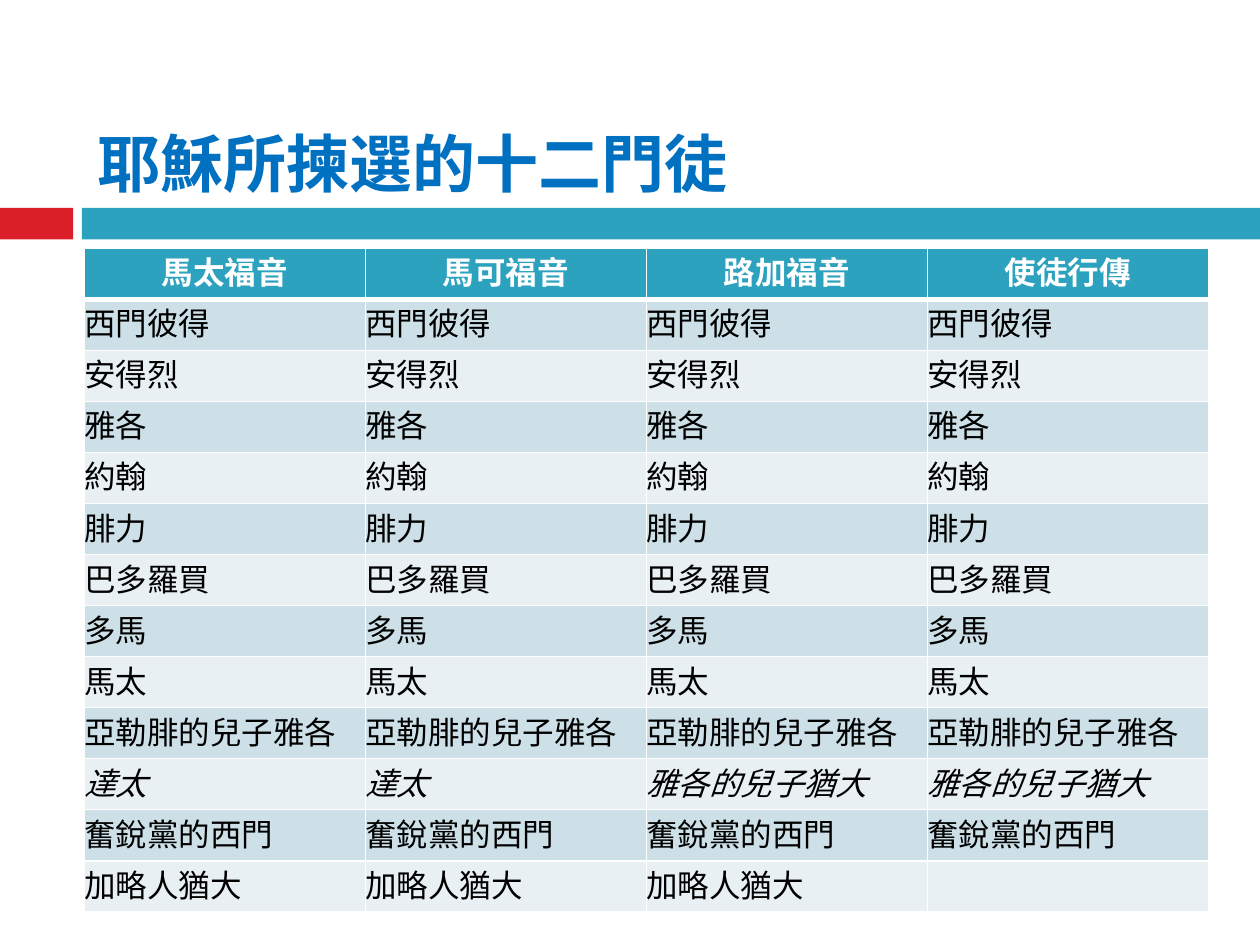
import pptx
import pptx.dml.color
import pptx.enum.shapes
import pptx.enum.text
import pptx.oxml
import pptx.oxml.ns
import pptx.util

Inches = pptx.util.Inches
FONT = "Cabin"
COLORS = {
    "red": "DA1F28",
    "teal": "2DA2BF",
    "title": "0070C0",
    "white": "FFFFFF",
    "black": "000000",
    "dark": "CDE0E8",
    "light": "E8F0F4",
}
BOOKS = ["馬太福音", "馬可福音", "路加福音", "使徒行傳"]
FIRST = ["西門彼得", "安得烈", "雅各", "約翰", "腓力", "巴多羅買",
         "多馬", "馬太", "亞勒腓的兒子雅各"]
VARIED = ["達太", "達太", "雅各的兒子猶大", "雅各的兒子猶大"]
ROWS = [
    BOOKS,
    *[[name] * 4 for name in FIRST],
    VARIED,
    ["奮銳黨的西門"] * 4,
    ["加略人猶大"] * 3 + [""],
]


def rgb(name):
    return pptx.dml.color.RGBColor.from_string(COLORS[name])


def paint(item, name):
    item.fill.solid()
    item.fill.fore_color.rgb = rgb(name)


def add_run(para, text, size, color, bold=False, italic=False):
    run = para.add_run()
    run.text = text
    font = run.font
    font.name = FONT
    font.size = pptx.util.Pt(size)
    font.bold = bold
    font.italic = italic
    font.color.rgb = rgb(color)


def add_title(slide, text):
    title = slide.shapes.title
    title.left, title.top = Inches(0.67), Inches(0.17)
    title.width, title.height = Inches(8.92), Inches(1.47)
    frame = title.text_frame
    frame.word_wrap = True
    frame.vertical_anchor = pptx.enum.text.MSO_ANCHOR.BOTTOM
    para = frame.paragraphs[0]
    para.alignment = pptx.enum.text.PP_ALIGN.LEFT
    add_run(para, text, 36, "title", bold=True)


def add_bar(slide, left, width, color):
    bar = slide.shapes.add_shape(
        pptx.enum.shapes.MSO_SHAPE.RECTANGLE,
        Inches(left), Inches(1.65), Inches(width), Inches(0.25))
    bar.shadow.inherit = False
    paint(bar, color)
    bar.line.fill.background()


def add_edge(cell, side, points):
    space = pptx.oxml.ns.nsdecls("a")
    width = pptx.util.Pt(points)
    line = pptx.oxml.parse_xml(
        f'<a:ln{side} {space} w="{width}"><a:solidFill>'
        f'<a:srgbClr val="{COLORS["white"]}"/></a:solidFill></a:ln{side}>')
    cell._tc.get_or_add_tcPr().append(line)


def fill_cell(cell, text, row):
    head = row == 0
    cell.margin_left = cell.margin_right = 0
    cell.margin_top = cell.margin_bottom = 0
    edges = {"L": 1, "R": 1, "T": 3 if row == 1 else 1, "B": 3 if head else 1}
    for side, points in edges.items():
        add_edge(cell, side, points)
    paint(cell, "teal" if head else "dark" if row % 2 else "light")
    if text:
        para = cell.text_frame.paragraphs[0]
        if head:
            para.alignment = pptx.enum.text.PP_ALIGN.CENTER
        add_run(para, text, 18, "white" if head else "black",
                bold=head, italic=ROWS[row] is VARIED)


def add_names(slide):
    table = slide.shapes.add_table(
        len(ROWS), len(BOOKS), Inches(0.67), Inches(1.97),
        Inches(8.92), Inches(5.27)).table
    for row, names in enumerate(ROWS):
        for col, name in enumerate(names):
            fill_cell(table.cell(row, col), name, row)


def main():
    deck = pptx.Presentation()
    deck.slide_width, deck.slide_height = Inches(10), Inches(7.5)
    slide = deck.slides.add_slide(deck.slide_layouts[5])
    add_bar(slide, 0, 0.58, "red")
    add_bar(slide, 0.65, 9.35, "teal")
    add_title(slide, "耶穌所揀選的十二門徒")
    add_names(slide)
    deck.save("out.pptx")


if __name__ == "__main__":
    main()
